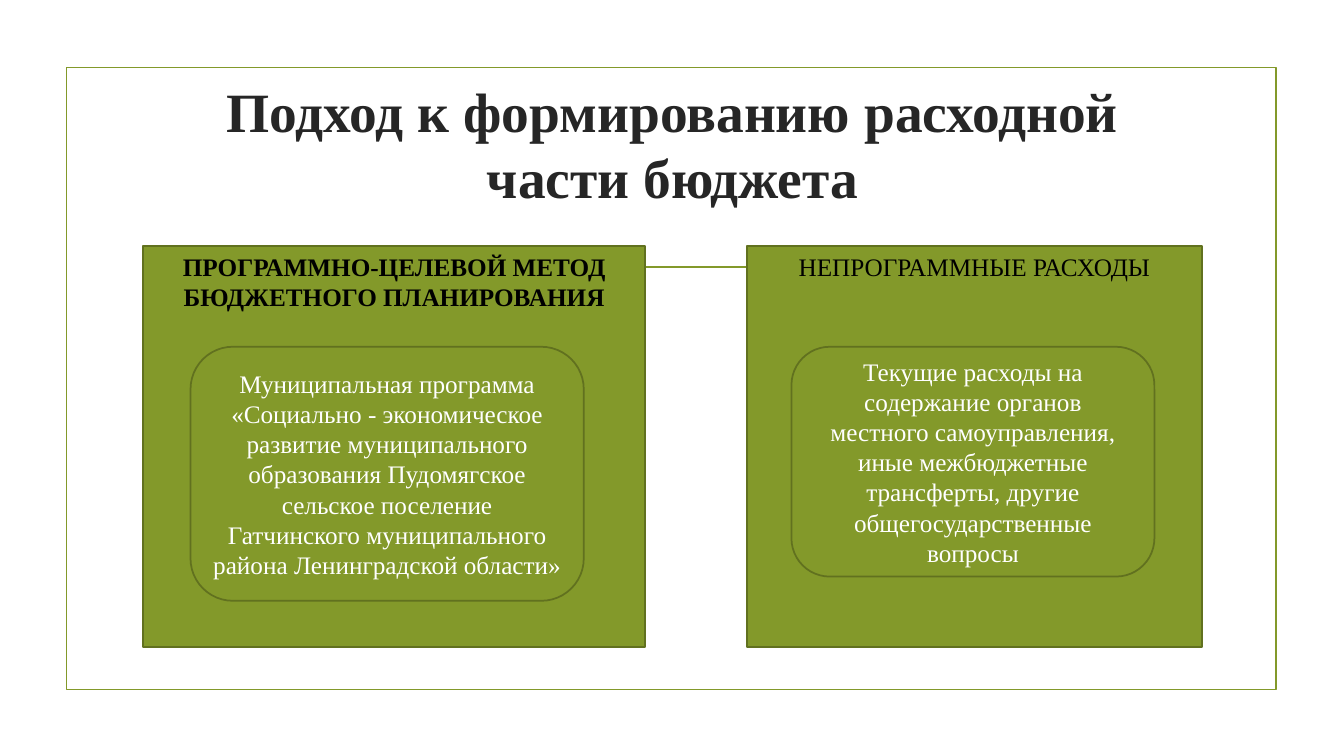
from dataclasses import dataclass

from pptx import Presentation
from pptx.dml.color import RGBColor
from pptx.enum.shapes import MSO_CONNECTOR as Connector, MSO_SHAPE as Shape
from pptx.enum.text import MSO_ANCHOR as Anchor, PP_ALIGN as Align
from pptx.oxml.ns import qn
from pptx.util import Inches, Pt
from lxml.etree import SubElement

FONT = "Times New Roman"
GREEN, DARK_GREEN = "83992A", "61711F"
BLACK, WHITE, TITLE_GREY = "000000", "FFFFFF", "262626"
PANEL_TOP, PANEL_HEIGHT, CARD_TOP = 2.44, 3.98, 3.44


@dataclass
class Box:
    left: float
    top: float
    width: float
    height: float

    def lengths(self) -> list:
        return [Inches(v) for v in (self.left, self.top, self.width, self.height)]


@dataclass
class Section:
    heading: str
    bold: bool
    panel: Box
    text: str
    card: Box


SECTIONS = [
    Section(
        "ПРОГРАММНО-ЦЕЛЕВОЙ МЕТОД БЮДЖЕТНОГО ПЛАНИРОВАНИЯ", True,
        Box(1.42, PANEL_TOP, 4.98, PANEL_HEIGHT),
        "Муниципальная программа «Социально - экономическое развитие "
        "муниципального образования Пудомягское сельское поселение "
        "Гатчинского муниципального района Ленинградской области»",
        Box(1.89, CARD_TOP, 3.9, 2.52),
    ),
    Section(
        "НЕПРОГРАММНЫЕ РАСХОДЫ", False,
        Box(7.41, PANEL_TOP, 4.51, PANEL_HEIGHT),
        "Текущие расходы на содержание органов местного самоуправления, "
        "иные межбюджетные трансферты, другие общегосударственные вопросы",
        Box(7.85, CARD_TOP, 3.6, 2.28),
    ),
]


def rgb(color: str) -> RGBColor:
    return RGBColor.from_string(color)


def write(sp, text: str, size: float, color: str, bold: bool, anchor) -> None:
    tf = sp.text_frame
    tf.word_wrap = True
    tf.vertical_anchor = anchor
    p = tf.paragraphs[0]
    p.alignment = Align.CENTER
    r = p.add_run()
    r.text = text
    for name, value in {"name": FONT, "size": Pt(size), "bold": bold}.items():
        setattr(r.font, name, value)
    r.font.color.rgb = rgb(color)


def add_box(slide, kind, box: Box, line: str, fill: str | None = None):
    sp = slide.shapes.add_shape(kind, *box.lengths())
    sp.shadow.inherit = False
    if fill:
        sp.fill.solid()
        sp.fill.fore_color.rgb = rgb(fill)
    else:
        sp.fill.background()
    sp.line.color.rgb = rgb(line)
    sp.line.width = Pt(1.25)
    return sp


def add_rule(slide, left: float, right: float, y: float) -> None:
    rule = slide.shapes.add_connector(
        Connector.STRAIGHT, Inches(left), Inches(y), Inches(right), Inches(y))
    rule.line.color.rgb = rgb(GREEN)
    rule.line.width = Pt(1.25)
    SubElement(rule._element.spPr, qn("a:effectLst"))


def add_title(slide, text: str, box: Box) -> None:
    title = slide.shapes.title
    for name, value in zip(("left", "top", "width", "height"), box.lengths()):
        setattr(title, name, value)
    write(title, text, 39.6, TITLE_GREY, True, Anchor.MIDDLE)


def main() -> None:
    prs = Presentation()
    prs.slide_width, prs.slide_height = Inches(13.33), Inches(7.5)
    slide = prs.slides.add_slide(prs.slide_layouts[5])

    add_box(slide, Shape.RECTANGLE, Box(0.66, 0.67, 12, 6.17), GREEN)
    add_rule(slide, 1.53, 11.81, 2.65)
    add_title(slide, "Подход к формированию расходной части бюджета",
              Box(1.42, 0.74, 10.5, 1.36))
    for s in SECTIONS:
        panel = add_box(slide, Shape.RECTANGLE, s.panel, DARK_GREEN, GREEN)
        write(panel, s.heading, 18, BLACK, s.bold, Anchor.TOP)
        card = add_box(slide, Shape.ROUNDED_RECTANGLE, s.card, DARK_GREEN, GREEN)
        write(card, s.text, 18, WHITE, False, Anchor.MIDDLE)
    prs.save("out.pptx")


if __name__ == "__main__":
    main()
